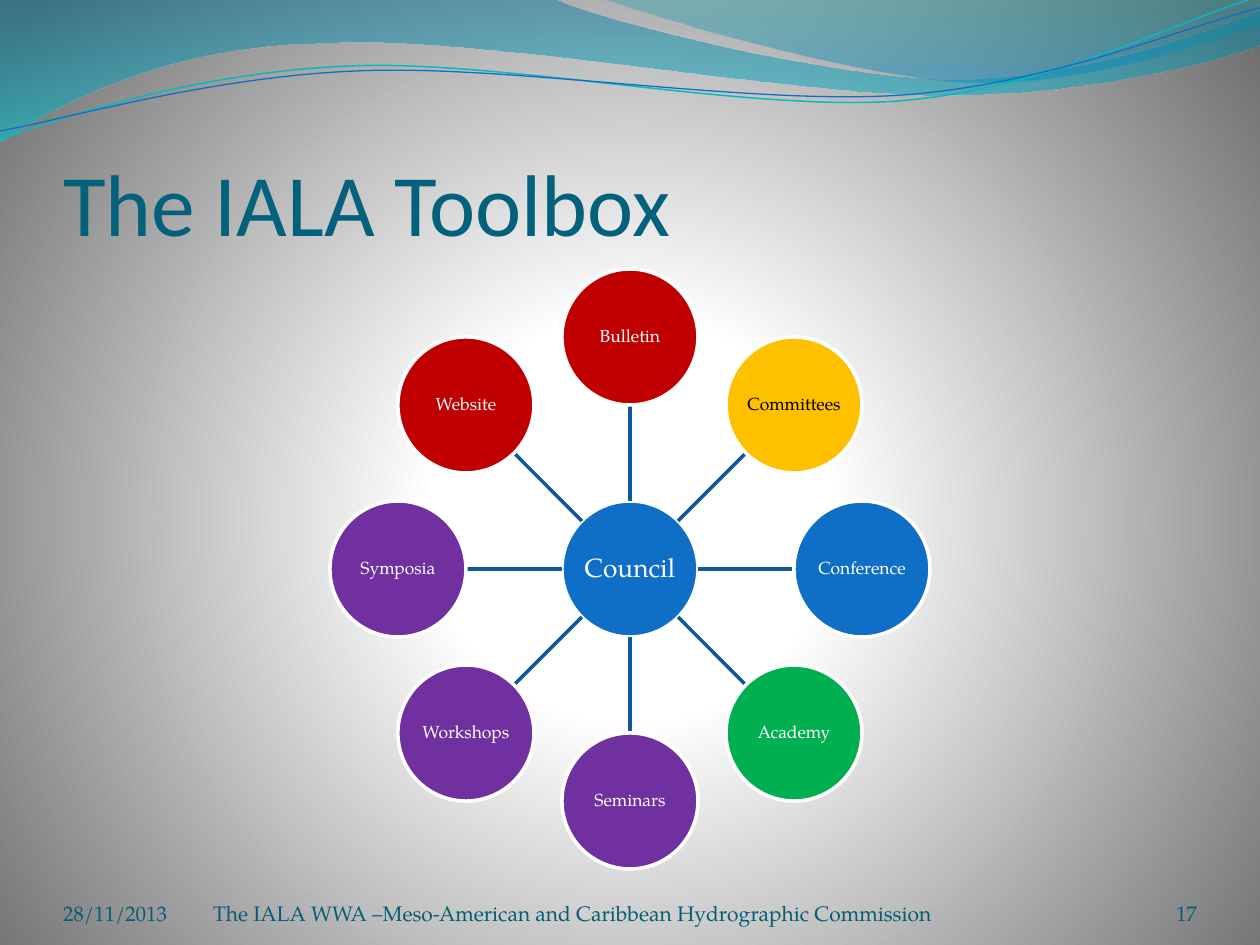
from dataclasses import dataclass
from itertools import chain
from math import cos, radians, sin
from typing import NamedTuple

from pptx import Presentation
from pptx.dml.color import RGBColor
from pptx.enum.shapes import MSO_CONNECTOR, MSO_SHAPE
from pptx.enum.text import MSO_ANCHOR, MSO_AUTO_SIZE, PP_ALIGN
from pptx.oxml import parse_xml
from pptx.oxml.ns import nsdecls, qn
from pptx.util import Emu, Pt

EMU_PER_PX = 914400 / 126


def px(n: float) -> Emu:
    return Emu(round(n * EMU_PER_PX))


@dataclass(frozen=True)
class Theme:
    heading_font: str = "Calibri"
    body_font: str = "TeX Gyre Pagella"
    title: str = "04617B"
    footer: str = "045D75"
    white: str = "FFFFFF"
    black: str = "000000"
    blue: str = "0F6FC6"
    red: str = "C00000"
    amber: str = "FFC000"
    green: str = "00B050"
    purple: str = "7030A0"
    spoke: str = "0C599F"
    teal: str = "0AB8BF"
    title_size: int = 50
    hub_size: int = 15
    node_size: int = 10
    footer_size: int = 12


T = Theme()


class Stop(NamedTuple):
    pos: int
    color: str
    opacity: int = 100


class Wave(NamedTuple):
    start: tuple
    segments: list  # one point is a line, three points are a Bezier curve
    stops: list = []
    line: str = ""
    width: float = 0


class Node(NamedTuple):
    label: str
    fill: str
    color: str = T.white


class Footer(NamedTuple):
    text: str
    left: int
    width: int
    align: PP_ALIGN = PP_ALIGN.LEFT


LINEAR_DOWN = '<a:lin ang="5400000" scaled="0"/>'
RADIAL = ('<a:path path="circle"><a:fillToRect l="10000" t="110000" '
          'r="10000" b="100000"/></a:path>')
BACKDROP = [Stop(0, "FFFFFF"), Stop(25, "FFFFFF"), Stop(100, "707070")]

WAVES = [
    Wave((0, 0),
         [[(554, -1)], [(600, 21), (837, 79), (955, 79)],
          [(1075, 79), (1207, 33), (1260, 11)], [(1261, 45)],
          [(1239, 55), (1096, 96), (940, 95)], [(784, 95), (481, 35), (324, 43)],
          [(163, 45), (58, 105), (-1, 142)], [(0, 0)]],
         stops=[Stop(0, "0074A1", 45), Stop(100, "00C6CF", 55)]),
    Wave((604, -1),
         [[(641, 14), (859, 78), (969, 82)], [(1079, 87), (1211, 40), (1260, 26)],
          [(1260, 0)], [(604, -1)]],
         stops=[Stop(0, "00A1A9", 30), Stop(80, "008BBF", 45)]),
    Wave((0, 140),
         [[(60, 117), (199, 72), (349, 66)], [(498, 59), (747, 112), (898, 101)],
          [(1049, 89), (1182, 19), (1257, -3)]],
         line=T.teal, width=0.85),
    Wave((0, 131),
         [[(59, 121), (207, 77), (357, 71)], [(508, 64), (752, 106), (903, 95)],
          [(1053, 84), (1186, 26), (1260, 8)]],
         line=T.blue, width=0.75),
]

# Clockwise from the top
NODES = [
    Node("Bulletin", T.red), Node("Committees", T.amber, T.black),
    Node("Conference", T.blue), Node("Academy", T.green),
    Node("Seminars", T.purple), Node("Workshops", T.purple),
    Node("Symposia", T.purple), Node("Website", T.red),
]
HUB = Node("Council", T.blue)
CENTER_X, CENTER_Y, RADIUS, ORBIT = 630, 569, 68, 232

FOOTERS = [
    Footer("28/11/2013", 63, 294),
    Footer("The IALA WWA –Meso-American and Caribbean Hydrographic Commission", 213, 774),
    Footer("17", 1092, 105, PP_ALIGN.RIGHT),
]


def rgb(color: str) -> RGBColor:
    return RGBColor.from_string(color)


def gradient(stops: list, direction: str):
    gs = "".join(
        f'<a:gs pos="{st.pos * 1000}"><a:srgbClr val="{st.color}">'
        f'<a:alpha val="{st.opacity * 1000}"/></a:srgbClr></a:gs>' for st in stops)
    return parse_xml(f'<a:gradFill {nsdecls("a")} rotWithShape="1">'
                     f'<a:gsLst>{gs}</a:gsLst>{direction}</a:gradFill>')


def set_background(s) -> None:
    bg = parse_xml(f'<p:bg {nsdecls("p", "a")}><p:bgPr><a:effectLst/></p:bgPr></p:bg>')
    bg[0].insert(0, gradient(BACKDROP, RADIAL))
    s._element.cSld.insert(0, bg)


def bend(outline, segments: list) -> None:
    """Turn each run of three line steps into one cubic curve."""
    steps = iter(list(outline)[1:])
    for seg in segments:
        group = [next(steps) for _ in seg]
        if len(group) == 3:
            curve = parse_xml(f'<a:cubicBezTo {nsdecls("a")}/>')
            group[0].addprevious(curve)
            for step in group:
                curve.append(step[0])
                outline.remove(step)


def add_wave(s, wave: Wave) -> None:
    builder = s.shapes.build_freeform(*wave.start, scale=EMU_PER_PX)
    builder.add_line_segments(chain.from_iterable(wave.segments), close=bool(wave.stops))
    sp = builder.convert_to_shape()
    sp_pr = sp._element.spPr
    bend(sp_pr.find(".//" + qn("a:path")), wave.segments)
    sp.shadow.inherit = False
    sp.fill.background()
    if wave.stops:
        sp.line.fill.background()
        sp_pr.replace(sp_pr.find(qn("a:noFill")), gradient(wave.stops, LINEAR_DOWN))
    else:
        sp.line.color.rgb = rgb(wave.line)
        sp.line.width = Pt(wave.width)


def write(tf, text: str, font: str, size: int, color: str,
          align: PP_ALIGN, anchor: MSO_ANCHOR, inset: int = 0):
    tf.word_wrap = True
    tf.auto_size = MSO_AUTO_SIZE.NONE
    tf.vertical_anchor = anchor
    tf.margin_left = tf.margin_right = tf.margin_top = tf.margin_bottom = px(inset)
    p = tf.paragraphs[0]
    p.text, p.alignment = text, align
    p.font.name, p.font.size, p.font.color.rgb = font, Pt(size), rgb(color)
    return p


def add_circle(s, node: Node, x: float, y: float, size: int) -> None:
    sp = s.shapes.add_shape(MSO_SHAPE.OVAL, px(x - RADIUS), px(y - RADIUS),
                            px(2 * RADIUS), px(2 * RADIUS))
    sp.shadow.inherit = False
    sp.fill.solid()
    sp.fill.fore_color.rgb = rgb(node.fill)
    sp.line.color.rgb = rgb(T.white)
    sp.line.width = Pt(2)
    p = write(sp.text_frame, node.label, T.body_font, size, node.color,
              PP_ALIGN.CENTER, MSO_ANCHOR.MIDDLE, inset=1)
    p.line_spacing = 0.9


def add_spoke(s, dx: float, dy: float) -> None:
    near, far = RADIUS, ORBIT - RADIUS
    cxn = s.shapes.add_connector(
        MSO_CONNECTOR.STRAIGHT,
        px(CENTER_X + near * dx), px(CENTER_Y + near * dy),
        px(CENTER_X + far * dx), px(CENTER_Y + far * dy))
    cxn.line.color.rgb = rgb(T.spoke)
    cxn.line.width = Pt(2)
    cxn._element.spPr.append(parse_xml(f'<a:effectLst {nsdecls("a")}/>'))


def main() -> None:
    prs = Presentation()
    prs.slide_width, prs.slide_height = px(1260), px(945)
    s = prs.slides.add_slide(prs.slide_layouts[5])

    # Backdrop and header waves
    set_background(s)
    for wave in WAVES:
        add_wave(s, wave)

    # Title
    title = s.shapes.title
    title.left, title.top, title.width, title.height = px(63), px(97), px(1134), px(157)
    write(title.text_frame, "The IALA Toolbox", T.heading_font, T.title_size, T.title,
          PP_ALIGN.LEFT, MSO_ANCHOR.BOTTOM)
    title.text_frame.margin_top = px(6)

    # Footer line
    for footer in FOOTERS:
        tb = s.shapes.add_textbox(px(footer.left), px(876), px(footer.width), px(50))
        write(tb.text_frame, footer.text, T.body_font, T.footer_size, T.footer,
              footer.align, MSO_ANCHOR.BOTTOM)

    # Hub with its ring of tools
    add_circle(s, HUB, CENTER_X, CENTER_Y, T.hub_size)
    for i, node in enumerate(NODES):
        angle = radians(360 / len(NODES) * i - 90)
        dx, dy = cos(angle), sin(angle)
        add_spoke(s, dx, dy)
        add_circle(s, node, CENTER_X + ORBIT * dx, CENTER_Y + ORBIT * dy, T.node_size)

    prs.save("out.pptx")


if __name__ == "__main__":
    main()
